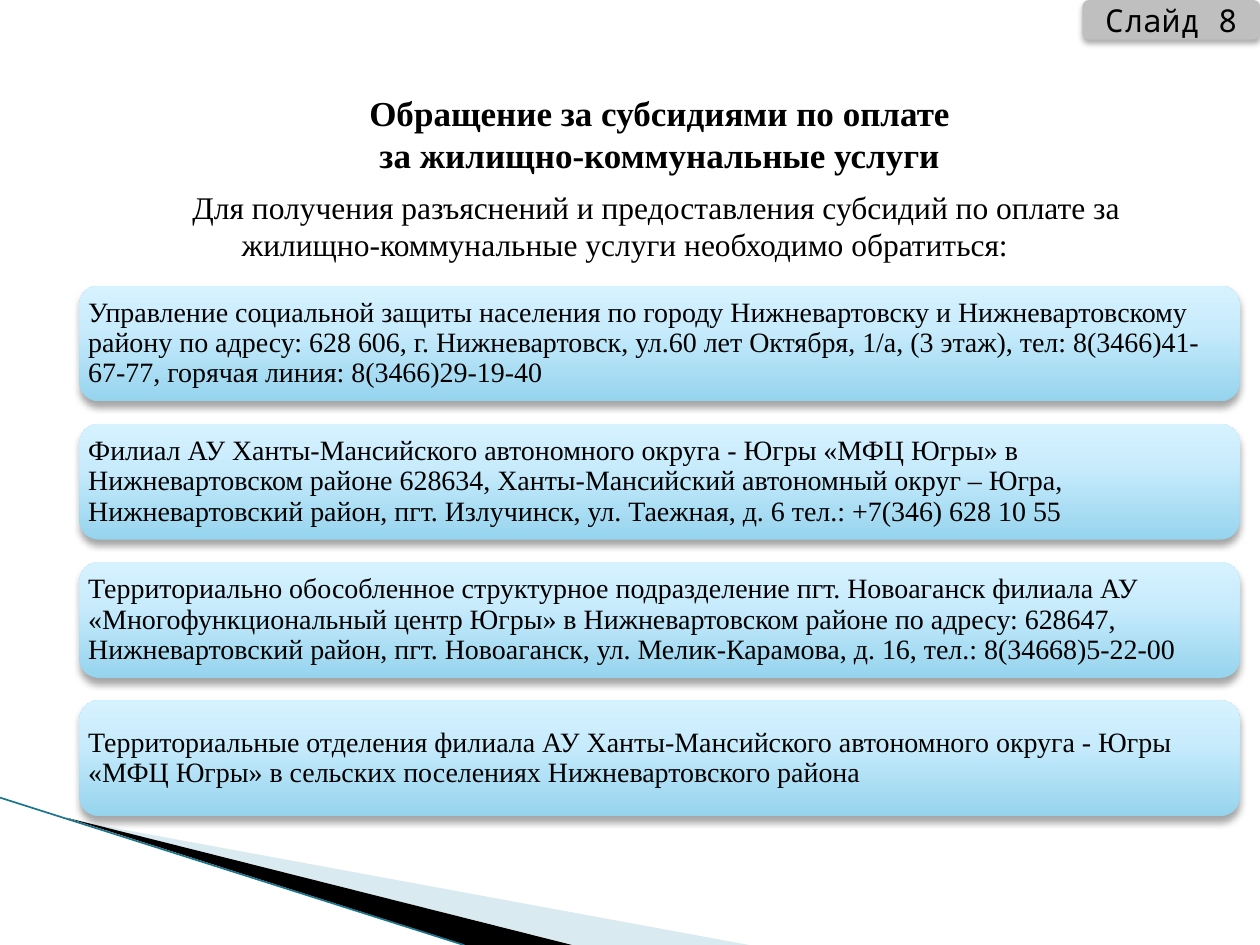
import copy

import pptx
import pptx.dml.color
import pptx.enum.shapes
import pptx.enum.text
import pptx.oxml
import pptx.oxml.ns
import pptx.util

Pt = pptx.util.Pt
RGBColor = pptx.dml.color.RGBColor
Align = pptx.enum.text.PP_ALIGN
Anchor = pptx.enum.text.MSO_ANCHOR
qn = pptx.oxml.ns.qn

BLACK = RGBColor(0x00, 0x00, 0x00)
TAG_GRAY = RGBColor(0xBF, 0xBF, 0xBF)
PALE_BLUE = RGBColor(0xA0, 0xCB, 0xDC)
LINE_TEAL = RGBColor(0x1B, 0x75, 0x8C)
CARD_STOPS = [
    (0, RGBColor(0x96, 0xD4, 0xEE)),
    (0.65, RGBColor(0xC9, 0xEC, 0xFC)),
    (1, RGBColor(0xD7, 0xF2, 0xFF)),
]

SERIF = "Times New Roman"
MONO = "Noto Sans Mono"

TITLE = "Обращение за субсидиями по оплате\vза жилищно-коммунальные услуги"
INTRO = (
    "\tДля получения разъяснений и предоставления субсидий по оплате за "
    "жилищно-коммунальные услуги необходимо обратиться:"
)
OFFICES = [
    "Управление социальной защиты населения по городу Нижневартовску и "
    "Нижневартовскому району по адресу: 628 606, г. Нижневартовск, ул.60 лет "
    "Октября, 1/а, (3 этаж), тел: 8(3466)41-67-77, горячая линия: 8(3466)29-19-40",
    "Филиал АУ Ханты-Мансийского автономного округа - Югры «МФЦ Югры» в "
    "Нижневартовском районе 628634, Ханты-Мансийский автономный округ – Югра, "
    "Нижневартовский район, пгт. Излучинск, ул. Таежная, д. 6 тел.: +7(346) 628 10 55",
    "Территориально обособленное структурное подразделение пгт. Новоаганск филиала АУ "
    "«Многофункциональный центр Югры» в Нижневартовском районе по адресу: 628647, "
    "Нижневартовский район, пгт. Новоаганск, ул. Мелик-Карамова, д. 16, "
    "тел.: 8(34668)5-22-00",
    "Территориальные отделения филиала АУ Ханты-Мансийского автономного округа - Югры "
    "«МФЦ Югры» в сельских поселениях Нижневартовского района",
]


def write_text(shape, text, size, font=SERIF, bold=False, align=Align.CENTER,
               anchor=Anchor.MIDDLE):
    frame = shape.text_frame
    frame.word_wrap = True
    frame.vertical_anchor = anchor
    paragraph = frame.paragraphs[0]
    paragraph.text = text
    paragraph.alignment = align
    paragraph.font.name = font
    paragraph.font.size = Pt(size)
    paragraph.font.bold = bold
    paragraph.font.color.rgb = BLACK
    return frame


def add_text(slide, box, text, size, **style):
    shape = slide.shapes.add_textbox(*map(Pt, box))
    return write_text(shape, text, size, **style)


def add_shadow(shape, opacity, blur, distance):
    shape.shadow.inherit = False
    effects = shape._element.spPr.find(qn("a:effectLst"))
    effects.append(pptx.oxml.parse_xml(
        f'<a:outerShdw {pptx.oxml.ns.nsdecls("a")} blurRad="{Pt(blur)}" '
        f'dist="{Pt(distance)}" dir="5400000" algn="ctr" rotWithShape="0">'
        f'<a:srgbClr val="000000"><a:alpha val="{opacity * 1000}"/></a:srgbClr>'
        f'</a:outerShdw>'))


def add_rounded_box(slide, box):
    kind = pptx.enum.shapes.MSO_SHAPE.ROUNDED_RECTANGLE
    shape = slide.shapes.add_shape(kind, *map(Pt, box))
    shape.line.fill.background()
    return shape


def fill_gradient(shape, stops):
    shape.fill.gradient()
    shape.fill.gradient_angle = 90
    stop_list = shape._element.spPr.find(qn("a:gradFill")).find(qn("a:gsLst"))
    while len(stop_list) < len(stops):
        stop_list.append(copy.deepcopy(stop_list[-1]))
    for stop, (position, color) in zip(shape.fill.gradient_stops, stops):
        stop.position = position
        stop.color.rgb = color


def add_office_card(slide, top, text):
    shape = add_rounded_box(slide, (45.4, top, 663, 66.2))
    fill_gradient(shape, CARD_STOPS)
    add_shadow(shape, opacity=35, blur=4, distance=3)
    frame = write_text(shape, text, 16, align=Align.LEFT)
    frame.margin_left = frame.margin_right = Pt(1.8)
    frame.margin_top = frame.margin_bottom = Pt(1.8)
    frame.paragraphs[0].line_spacing = 0.9


def add_wedge(slide, points, color, opacity=100):
    builder = slide.shapes.build_freeform(*map(Pt, points[0]), scale=1.0)
    builder.add_line_segments([tuple(map(Pt, point)) for point in points[1:]])
    shape = builder.convert_to_shape()
    shape.shadow.inherit = False
    shape.line.fill.background()
    shape.fill.solid()
    shape.fill.fore_color.rgb = color
    if opacity < 100:
        color_element = shape._element.spPr.find(qn("a:solidFill"))[0]
        alpha = color_element.makeelement(qn("a:alpha"), {"val": str(opacity * 1000)})
        color_element.append(alpha)


def add_edge_line(slide, start, end):
    straight = pptx.enum.shapes.MSO_CONNECTOR.STRAIGHT
    connector = slide.shapes.add_connector(straight, *map(Pt, start + end))
    connector.line.color.rgb = LINE_TEAL
    connector.line.width = Pt(0.95)
    properties = connector._element.spPr
    properties.append(properties.makeelement(qn("a:effectLst"), {}))


def main():
    presentation = pptx.Presentation()
    presentation.slide_width = Pt(720)
    presentation.slide_height = Pt(540)
    slide = presentation.slides.add_slide(presentation.slide_layouts[6])

    # Corner wedges
    add_wedge(slide, [(39.6, 468.4), (428, 540), (328, 540)], PALE_BLUE, opacity=40)
    add_wedge(slide, [(38.2, 467.3), (327, 540), (266, 540)], BLACK)
    add_edge_line(slide, (0, 455.8), (265, 540))

    # Slide number tag
    tag = add_rounded_box(slide, (618.5, 0, 101.5, 22.6))
    tag.fill.solid()
    tag.fill.fore_color.rgb = TAG_GRAY
    add_shadow(tag, opacity=32, blur=3.5, distance=2.2)
    write_text(tag, "Слайд 8", 18, font=MONO)

    # Title and introduction
    title = add_text(slide, (107.3, 41.8, 539.3, 90), TITLE, 20, bold=True)
    title.margin_bottom = Pt(24.5)
    add_text(slide, (45.4, 103.7, 623.5, 51), INTRO, 18, anchor=Anchor.TOP)

    # Offices to contact
    for index, office in enumerate(OFFICES):
        add_office_card(slide, 163.2 + 79 * index, office)

    presentation.save("out.pptx")


if __name__ == "__main__":
    main()
